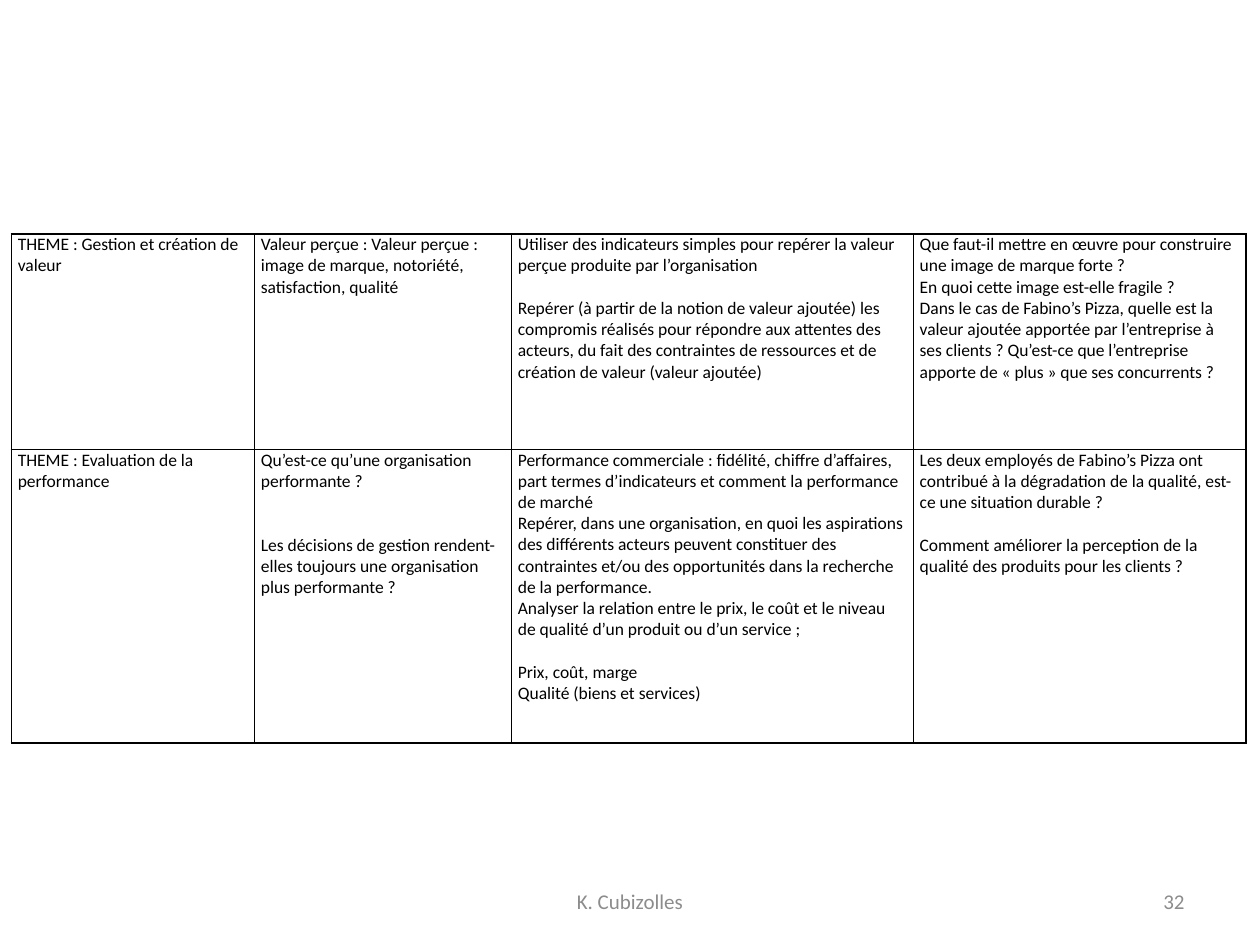
from dataclasses import dataclass

from lxml.etree import SubElement
from pptx import Presentation
from pptx.dml.color import RGBColor
from pptx.enum.text import MSO_ANCHOR, PP_ALIGN
from pptx.oxml.ns import qn
from pptx.util import Cm, Pt


@dataclass(frozen=True)
class Theme:
    face: str = "Calibri"
    ink: str = "000000"
    paper: str = "FFFFFF"
    muted: str = "8C8C8C"
    body: int = 10
    footer: int = 12
    blank_line: float = 12.2
    border: int = 1


THEME = Theme()

COLUMN_WIDTHS = (4.9, 5.18, 8.1, 6.71)
ROW_HEIGHTS = (4.34, 5.92)
CELL_FORMAT = {
    "margin_left": Cm(0.13),
    "margin_right": Cm(0.13),
    "margin_top": 0,
    "margin_bottom": 0,
    "vertical_anchor": MSO_ANCHOR.TOP,
}

# fmt: off
THEMES = (
    (
        ((0, "THEME : Gestion et création de valeur"),),
        (
            (0, "Valeur perçue : Valeur perçue : image de marque, notoriété,"),
            (0, "satisfaction, qualité"),
        ),
        (
            (0, "Utiliser des indicateurs simples pour repérer la valeur perçue produite par l’organisation"),
            (1, "Repérer (à partir de la notion de valeur ajoutée) les"),
            (0, "compromis réalisés pour répondre aux attentes des"),
            (0, "acteurs, du fait des contraintes de ressources et de"),
            (0, "création de valeur (valeur ajoutée)"),
        ),
        (
            (0, "Que faut-il mettre en œuvre pour construire une image de marque forte ?"),
            (0, "En quoi cette image est-elle fragile ?"),
            (0, "Dans le cas de Fabino’s Pizza, quelle est la valeur ajoutée apportée par l’entreprise à ses clients ? "
                "Qu’est-ce que l’entreprise apporte de « plus » que ses concurrents ?"),
        ),
    ),
    (
        ((0, "THEME : Evaluation de la performance"),),
        (
            (0, "Qu’est-ce qu’une organisation performante ?"),
            (2, "Les décisions de gestion rendent-elles toujours une organisation plus performante ?"),
        ),
        (
            (0, "Performance commerciale : fidélité, chiffre d’affaires, part termes d’indicateurs "
                "et comment la performance de marché"),
            (0, "Repérer, dans une organisation, en quoi les aspirations des différents acteurs peuvent constituer "
                "des contraintes et/ou des opportunités dans la recherche de la performance."),
            (0, "Analyser la relation entre le prix, le coût et le niveau de qualité d’un produit ou d’un service ;"),
            (1, "Prix, coût, marge"),
            (0, "Qualité (biens et services)"),
        ),
        (
            (0, "Les deux employés de Fabino’s Pizza ont contribué à la dégradation de la qualité, "
                "est-ce une situation durable ?"),
            (1, "Comment améliorer la perception de la qualité des produits pour les clients ?"),
        ),
    ),
)
# fmt: on


def apply(target, values):
    for name, value in values.items():
        setattr(target, name, value)


def write(paragraph, text, size, color, **layout):
    apply(paragraph, layout)
    run = paragraph.add_run()
    run.text = text
    apply(run.font, {"name": THEME.face, "size": Pt(size)})
    run.font.color.rgb = RGBColor.from_string(color)


def draw_borders(cell):
    properties = cell._tc.get_or_add_tcPr()
    for side in ("a:lnL", "a:lnR", "a:lnT", "a:lnB"):
        line = SubElement(properties, qn(side), w=str(Pt(THEME.border)))
        fill = SubElement(line, qn("a:solidFill"))
        SubElement(fill, qn("a:srgbClr"), val=THEME.ink)


def fill_cell(cell, entries):
    apply(cell, CELL_FORMAT)
    draw_borders(cell)
    cell.fill.solid()
    cell.fill.fore_color.rgb = RGBColor.from_string(THEME.paper)
    frame = cell.text_frame
    for index, (blank_lines, text) in enumerate(entries):
        paragraph = frame.add_paragraph() if index else frame.paragraphs[0]
        write(paragraph, text, THEME.body, THEME.ink,
              space_before=Pt(blank_lines * THEME.blank_line))


def build_programme(slide, left, top):
    programme = slide.shapes.add_table(
        len(ROW_HEIGHTS), len(COLUMN_WIDTHS), left, top,
        Cm(sum(COLUMN_WIDTHS)), Cm(sum(ROW_HEIGHTS)),
    ).table
    apply(programme, {"first_row": False, "horz_banding": False})
    for column, width in zip(programme.columns, COLUMN_WIDTHS):
        column.width = Cm(width)
    for row, height, theme_cells in zip(programme.rows, ROW_HEIGHTS, THEMES):
        row.height = Cm(height)
        for cell, entries in zip(row.cells, theme_cells):
            fill_cell(cell, entries)


def build_footer(slide, left, top, width, height):
    parts = (
        ("K. Cubizolles", 0, Cm(8.04), PP_ALIGN.CENTER),
        ("32", width - Cm(5.92), Cm(5.92), PP_ALIGN.RIGHT),
    )
    for text, offset, part_width, alignment in parts:
        frame = slide.shapes.add_textbox(left + offset, top, part_width, height).text_frame
        apply(frame, {"word_wrap": True, "vertical_anchor": MSO_ANCHOR.MIDDLE})
        write(frame.paragraphs[0], text, THEME.footer, THEME.muted, alignment=alignment)


def main():
    deck = Presentation()
    apply(deck, {"slide_width": Cm(25.4), "slide_height": Cm(19.05)})
    slide = deck.slides.add_slide(deck.slide_layouts[6])
    build_footer(slide, Cm(8.68), Cm(17.66), Cm(15.45), Cm(1.01))
    build_programme(slide, Cm(0.23), Cm(4.72))
    deck.save("out.pptx")


if __name__ == "__main__":
    main()
